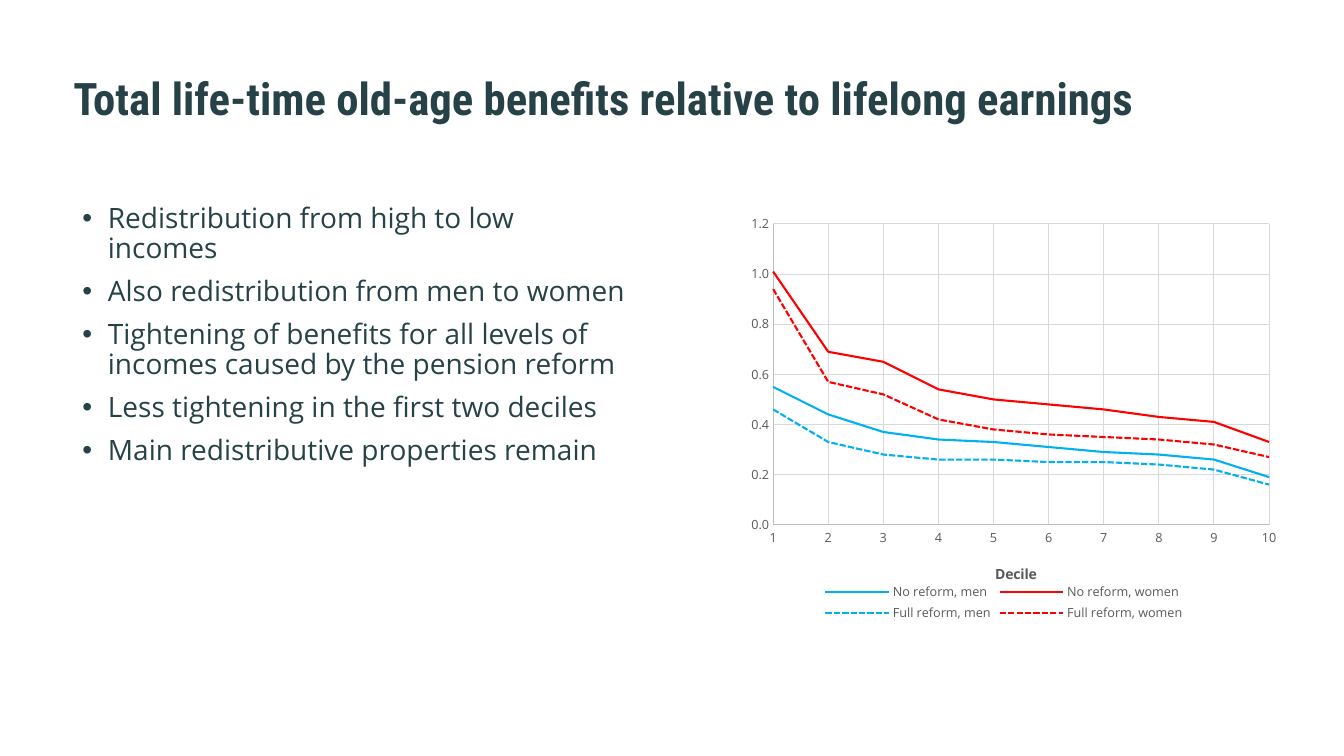
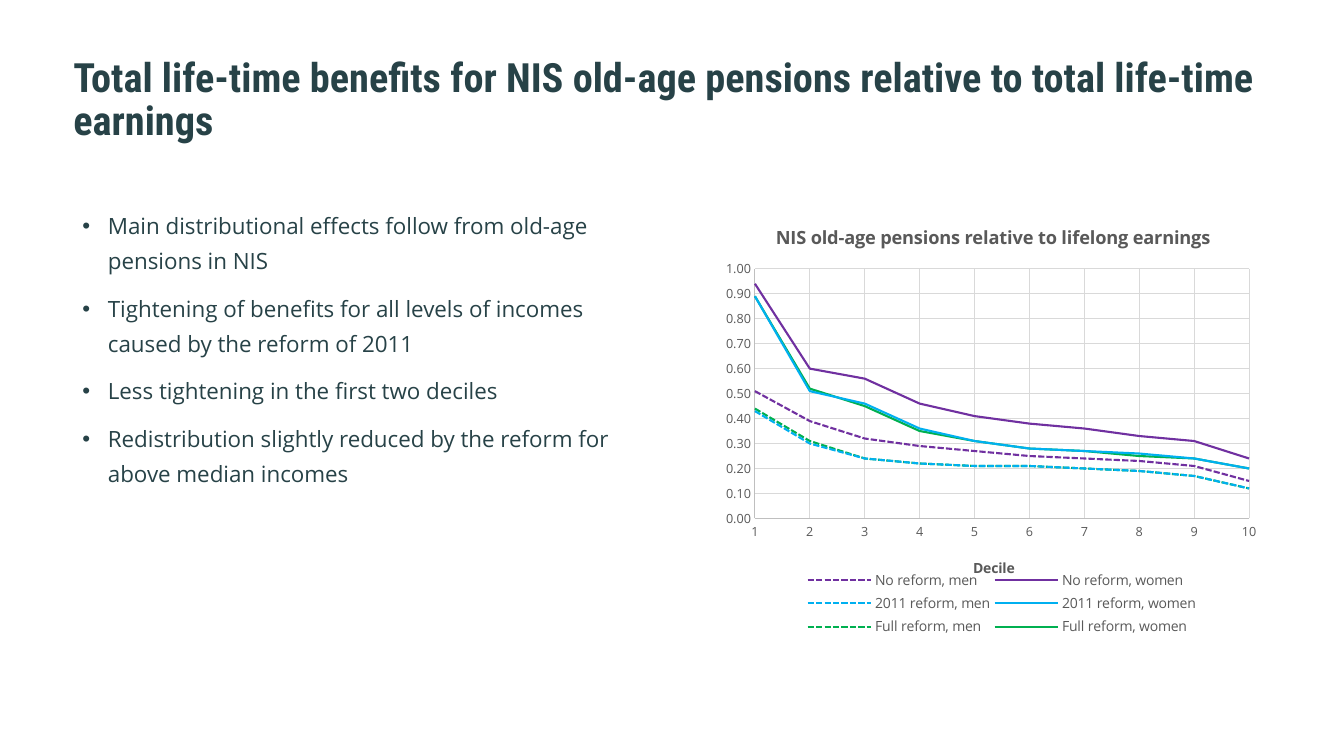
import pptx
import pptx.chart.data
import pptx.dml.color
import pptx.enum.chart
import pptx.enum.dml
import pptx.enum.text
import pptx.oxml
import pptx.oxml.ns
import pptx.util

Cm, Pt = pptx.util.Cm, pptx.util.Pt
BODY_FONT, TITLE_FONT = "Open Sans", "Roboto Condensed"
INK, LABEL, AXIS, GRID = "274247", "595959", "BFBFBF", "D9D9D9"
BLUE, RED, PURPLE, GREEN = "00B0F0", "FF0000", "7030A0", "00B050"
TITLE_BOX = (1.6, 1.52, 30.5, 2.18)
POINTS_BOX = (1.83, 5.03, 14.25, 11.4)
DECILES = range(1, 11)

SLIDES = [
    {
        "title": "Total life-time old-age benefits relative to lifelong earnings",
        "title_size": 32,
        "points": [
            "Redistribution from high to low incomes",
            "Also redistribution from men to women",
            "Tightening of benefits for all levels of incomes caused by the pension reform",
            "Less tightening in the first two deciles",
            "Main redistributive properties remain",
        ],
        "points_size": 20,
        "points_spacing": 0.9,
        "chart_box": (18.19, 5.03, 14.22, 10.77),
        "chart_title": None,
        "top": 1.2,
        "step": 0.2,
        "format": "0.0",
        "legend_size": 9,
        "plot": (0.091, 0.057, 0.879, 0.704),
        "decile_at": (0.48, 0.845),
        "legend": (0.175, 0.89, 0.65, 0.105),
        "lines": [
            ("No reform, men", BLUE, False,
             [0.55, 0.44, 0.37, 0.34, 0.33, 0.31, 0.29, 0.28, 0.26, 0.19]),
            ("No reform, women", RED, False,
             [1.01, 0.69, 0.65, 0.54, 0.5, 0.48, 0.46, 0.43, 0.41, 0.33]),
            ("Full reform, men", BLUE, True,
             [0.46, 0.33, 0.28, 0.26, 0.26, 0.25, 0.25, 0.24, 0.22, 0.16]),
            ("Full reform, women", RED, True,
             [0.94, 0.57, 0.52, 0.42, 0.38, 0.36, 0.35, 0.34, 0.32, 0.27]),
        ],
    },
    {
        "title": "Total life-time benefits for NIS old-age pensions relative to total life-time earnings",
        "title_size": 28.8,
        "points": [
            "Main distributional effects follow from old-age pensions in NIS",
            "Tightening of benefits for all levels of incomes caused by the reform of 2011",
            "Less tightening in the first two deciles",
            "Redistribution slightly reduced by the reform for above median incomes",
        ],
        "points_size": 16,
        "points_spacing": 1.3,
        "chart_box": (17.81, 5.03, 14.3, 11.4),
        "chart_title": "NIS old-age pensions relative to lifelong earnings",
        "top": 1,
        "step": 0.1,
        "format": "0.00",
        "legend_size": 10,
        "plot": (0.085, 0.153, 0.871, 0.552),
        "decile_at": (0.465, 0.785),
        "legend": (0.17, 0.81, 0.7, 0.165),
        "lines": [
            ("No reform, men", PURPLE, True,
             [0.51, 0.39, 0.32, 0.29, 0.27, 0.25, 0.24, 0.23, 0.21, 0.15]),
            ("No reform, women", PURPLE, False,
             [0.94, 0.6, 0.56, 0.46, 0.41, 0.38, 0.36, 0.33, 0.31, 0.24]),
            ("2011 reform, men", BLUE, True,
             [0.43, 0.3, 0.24, 0.22, 0.21, 0.21, 0.2, 0.19, 0.17, 0.12]),
            ("2011 reform, women", BLUE, False,
             [0.89, 0.51, 0.46, 0.36, 0.31, 0.28, 0.27, 0.26, 0.24, 0.2]),
            ("Full reform, men", GREEN, True,
             [0.44, 0.31, 0.24, 0.22, 0.21, 0.21, 0.2, 0.19, 0.17, 0.12]),
            ("Full reform, women", GREEN, False,
             [0.89, 0.52, 0.45, 0.35, 0.31, 0.28, 0.27, 0.25, 0.24, 0.2]),
        ],
    },
]


def paint(color_format, hex_color):
    color_format.rgb = pptx.dml.color.RGBColor.from_string(hex_color)


def style_font(font, size, color, bold=False, name=BODY_FONT):
    font.name, font.size, font.bold = name, Pt(size), bold
    paint(font.color, color)


def style_line(line, color, width=0.75):
    paint(line.color, color)
    line.width = Pt(width)


def set_layout(parent, index, fractions, inner=False):
    for old in parent.findall(pptx.oxml.ns.qn("c:layout")):
        parent.remove(old)
    keys = ("x", "y", "w", "h")[:len(fractions)]
    target = '<c:layoutTarget val="inner"/>' if inner else ""
    modes = "".join(f'<c:{key}Mode val="edge"/>' for key in keys[:2])
    values = "".join(f'<c:{key} val="{value}"/>' for key, value in zip(keys, fractions))
    parent.insert(index, pptx.oxml.parse_xml(
        f'<c:layout {pptx.oxml.ns.nsdecls("c")}><c:manualLayout>'
        f"{target}{modes}{values}</c:manualLayout></c:layout>"))


def add_text(slide, box, lines):
    frame = slide.shapes.add_textbox(*map(Cm, box)).text_frame
    frame.word_wrap = True
    frame.text = "\n".join(lines)
    return frame


def add_title(slide, box, text, size):
    frame = add_text(slide, box, [text])
    frame.vertical_anchor = pptx.enum.text.MSO_ANCHOR.MIDDLE
    frame.margin_top = 0
    heading = frame.paragraphs[0]
    heading.line_spacing = 0.9
    style_font(heading.runs[0].font, size, INK, True, TITLE_FONT)


def add_points(slide, box, points, size, spacing):
    for point in add_text(slide, box, points).paragraphs:
        properties = point._p.get_or_add_pPr()
        indent = Cm(0.64)
        properties.set("marL", str(indent))
        properties.set("indent", str(-indent))
        for bullet in ('buFont {} typeface="Arial"', 'buChar {} char="•"'):
            properties.append(pptx.oxml.parse_xml(
                f'<a:{bullet.format(pptx.oxml.ns.nsdecls("a"))}/>'))
        point.line_spacing = spacing
        point.space_after = Pt(9)
        style_font(point.runs[0].font, size, INK)


def style_axis(axis, low, high, step, number_format):
    axis.minimum_scale, axis.maximum_scale, axis.major_unit = low, high, step
    axis.major_tick_mark = axis.minor_tick_mark = pptx.enum.chart.XL_TICK_MARK.NONE
    axis.has_major_gridlines = True
    style_line(axis.major_gridlines.format.line, GRID)
    style_line(axis.format.line, AXIS)
    axis.tick_labels.number_format = number_format
    axis.tick_labels.number_format_is_linked = False
    style_font(axis.tick_labels.font, 9, LABEL)


def write_chart_text(title, text, size):
    title.text_frame.text = text
    style_font(title.text_frame.paragraphs[0].runs[0].font, size, LABEL, True)


def add_benefit_chart(slide, box, content):
    data = pptx.chart.data.XyChartData()
    for name, _, _, shares in content["lines"]:
        group = data.add_series(name)
        for decile, share in zip(DECILES, shares):
            group.add_data_point(decile, share)
    chart = slide.shapes.add_chart(
        pptx.enum.chart.XL_CHART_TYPE.XY_SCATTER_LINES_NO_MARKERS,
        *map(Cm, box), data).chart
    style_font(chart.font, 10, LABEL)

    chart.has_title = bool(content["chart_title"])
    if chart.has_title:
        write_chart_text(chart.chart_title, content["chart_title"], 13)
        set_layout(chart.chart_title._element, 1, (0.116, 0.045))

    style_axis(chart.category_axis, 1, 10, 1, "General")
    style_axis(chart.value_axis, 0, content["top"], content["step"], content["format"])
    decile_title = chart.category_axis.axis_title
    write_chart_text(decile_title, "Decile", 10)
    set_layout(decile_title._element, 1, content["decile_at"])

    chart.has_legend = True
    chart.legend.position = pptx.enum.chart.XL_LEGEND_POSITION.BOTTOM
    chart.legend.include_in_layout = False
    style_font(chart.legend.font, content["legend_size"], LABEL)
    set_layout(chart.legend._element, 1, content["legend"])
    set_layout(chart._chartSpace.chart.plotArea, 0, content["plot"], inner=True)

    plot = chart.plots[0]
    plot.vary_by_categories = False
    for group, (_, color, dashed, _) in zip(plot.series, content["lines"]):
        group.smooth = False
        group.marker.style = pptx.enum.chart.XL_MARKER_STYLE.NONE
        style_line(group.format.line, color, 1.5)
        if dashed:
            group.format.line.dash_style = pptx.enum.dml.MSO_LINE.SQUARE_DOT


def add_benefit_slide(deck, content):
    slide = deck.slides.add_slide(deck.slide_layouts[6])
    add_title(slide, TITLE_BOX, content["title"], content["title_size"])
    add_points(slide, POINTS_BOX, content["points"],
               content["points_size"], content["points_spacing"])
    add_benefit_chart(slide, content["chart_box"], content)


def main():
    deck = pptx.Presentation()
    deck.slide_width, deck.slide_height = Cm(33.87), Cm(19.05)
    for content in SLIDES:
        add_benefit_slide(deck, content)
    deck.save("out.pptx")


if __name__ == "__main__":
    main()
